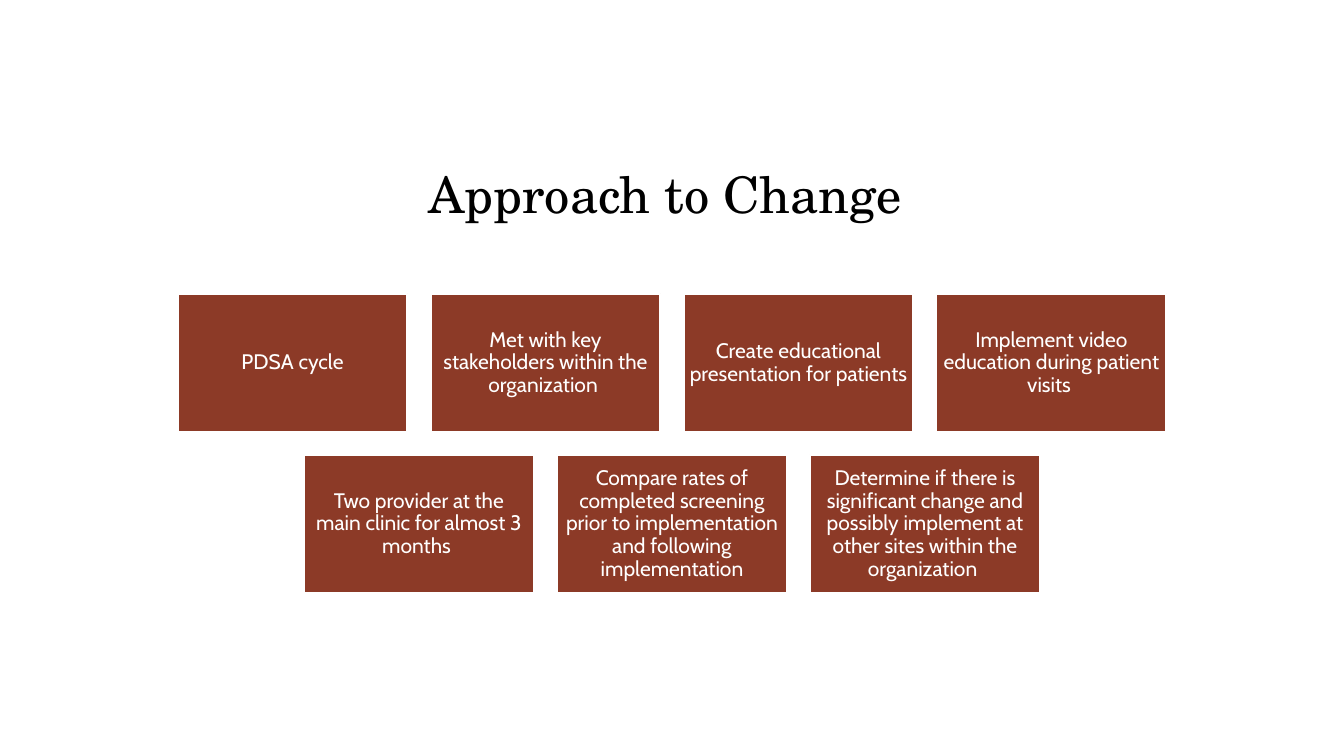
"""Build the "Approach to Change" slide: a title above two centred rows of cards."""
from pptx import Presentation
from pptx.dml.color import RGBColor
from pptx.enum.shapes import MSO_SHAPE
from pptx.enum.text import MSO_ANCHOR, PP_ALIGN
from pptx.util import Emu, Pt

TITLE = "Approach to Change "
CARD_ROWS = [
    [
        "PDSA cycle",
        "Met with key stakeholders within the organization ",
        "Create educational presentation for patients ",
        "Implement video education during patient visits ",
    ],
    [
        "Two provider at the main clinic for almost 3 months ",
        "Compare rates of completed screening prior to implementation and following implementation",
        "Determine if there is significant change and possibly implement at other sites within the organization ",
    ],
]
COLORS = {"title": "000000", "card": "8C3A27", "white": "FFFFFF"}

EMU_PER_PX = 914400 / 100.8
SLIDE_WIDTH, SLIDE_HEIGHT = 1344, 756
TITLE_BOX = (178, 110, 988, 119)
CARDS_TOP = 294
CARD_WIDTH, CARD_HEIGHT, CARD_GAP = 230, 138, 23
CARD_INSET = 6


def px(length):
    return Emu(round(length * EMU_PER_PX))


def color(name):
    return RGBColor.from_string(COLORS[name])


def write(shape, text, font_name, size, color_name, anchor):
    text_frame = shape.text_frame
    text_frame.text = text
    text_frame.word_wrap = True
    text_frame.vertical_anchor = anchor
    paragraph = text_frame.paragraphs[0]
    paragraph.alignment = PP_ALIGN.CENTER
    paragraph.line_spacing = 0.9
    font = paragraph.runs[0].font
    font.name = font_name
    font.size = Pt(size)
    font.color.rgb = color(color_name)


def add_card(slide, left, top, text):
    card = slide.shapes.add_shape(
        MSO_SHAPE.RECTANGLE, px(left), px(top), px(CARD_WIDTH), px(CARD_HEIGHT))
    card.shadow.inherit = False
    card.fill.solid()
    card.fill.fore_color.rgb = color("card")
    card.line.color.rgb = color("white")
    card.line.width = Pt(1.5)
    text_frame = card.text_frame
    text_frame.margin_left = text_frame.margin_right = px(CARD_INSET)
    text_frame.margin_top = text_frame.margin_bottom = px(CARD_INSET)
    write(card, text, "Cabin", 15, "white", MSO_ANCHOR.MIDDLE)


def main():
    presentation = Presentation()
    presentation.slide_width = px(SLIDE_WIDTH)
    presentation.slide_height = px(SLIDE_HEIGHT)
    slide = presentation.slides.add_slide(presentation.slide_layouts[6])

    title = slide.shapes.add_textbox(*map(px, TITLE_BOX))
    write(title, TITLE, "TeX Gyre Schola", 36, "title", MSO_ANCHOR.BOTTOM)

    for row, texts in enumerate(CARD_ROWS):
        row_width = len(texts) * (CARD_WIDTH + CARD_GAP) - CARD_GAP
        row_left = (SLIDE_WIDTH - row_width) / 2
        top = CARDS_TOP + row * (CARD_HEIGHT + CARD_GAP)
        for column, text in enumerate(texts):
            add_card(slide, row_left + column * (CARD_WIDTH + CARD_GAP), top, text)

    presentation.save("out.pptx")


if __name__ == "__main__":
    main()
